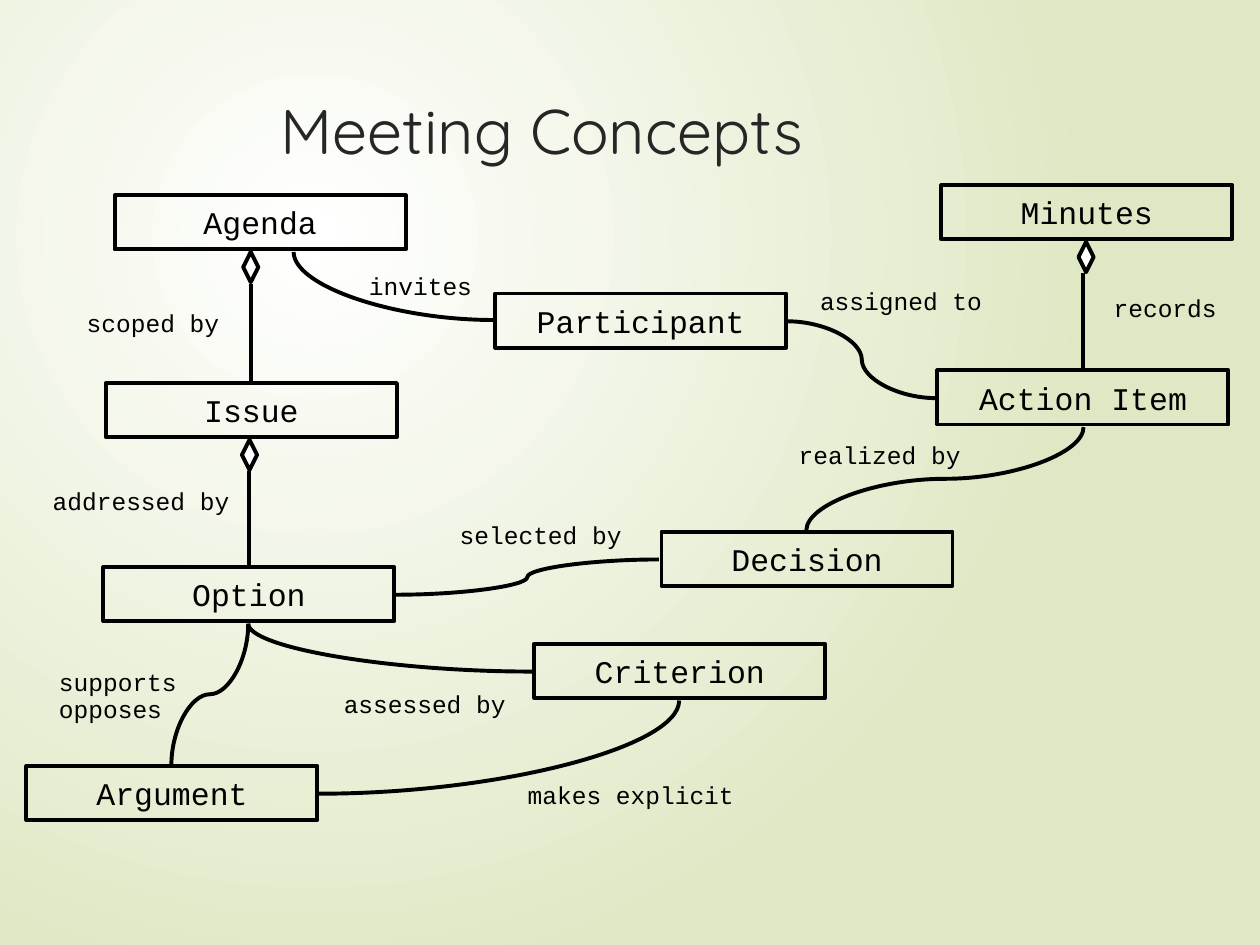
from lxml.etree import SubElement
from pptx import Presentation
from pptx.dml.color import RGBColor
from pptx.enum.shapes import MSO_CONNECTOR as Link, MSO_SHAPE as Shape
from pptx.enum.text import MSO_ANCHOR as Anchor, MSO_AUTO_SIZE as Fit, PP_ALIGN as Align
from pptx.oxml.ns import qn
from pptx.util import Inches, Pt

# Grid: 100 columns by 75 rows of square cells
CELL = Inches(10) // 100
BOX_WIDTH, BOX_HEIGHT = 23.1, 4.3
DIAMOND_WIDTH, DIAMOND_HEIGHT = 1.2, 2.4
LABEL_HEIGHT = 3.3
INK, PAPER, LEAF = "000000", "FFFFFF", "DFE8C4"

TITLE_FONT = {"name": "Quicksand", "size": Pt(36)}
BOX_FONT = {"name": "Courier New", "size": Pt(18)}
LABEL_FONT = {"name": "Courier New", "size": Pt(14)}
TITLE_FRAME = {"word_wrap": True, "vertical_anchor": Anchor.TOP}
BOX_FRAME = {"word_wrap": True, "vertical_anchor": Anchor.MIDDLE,
             "auto_size": Fit.SHAPE_TO_FIT_TEXT}
LABEL_FRAME = BOX_FRAME | {"word_wrap": False}

# Concept: left, top
CONCEPTS = {
    "Agenda": (9.1, 15.5), "Minutes": (74.7, 14.7),
    "Participant": (39.3, 23.3), "Action Item": (74.4, 29.4),
    "Issue": (8.4, 30.4), "Decision": (52.5, 42.2),
    "Option": (8.2, 45), "Criterion": (42.4, 51.1),
    "Argument": (2.1, 60.8),
}
# Part, and left and top of the diamond under its whole
AGGREGATIONS = [("Issue", 19.3, 20), ("Option", 19.2, 34.9), ("Action Item", 85.6, 19.2)]
# Start, end, starts vertically, number of bends
CURVES = [
    ((23.3, 20), (39.2, 25.4), True, 1),      # Agenda to Participant
    ((62.5, 25.5), (74.3, 31.6), False, 2),   # Participant to Action Item
    ((64, 42.1), (86, 33.9), True, 2),        # Decision to Action Item
    ((52.3, 44.4), (31.4, 47.2), False, 2),   # Decision to Option
    ((19.7, 49.5), (42.2, 53.3), True, 1),    # Option to Criterion
    ((19.7, 49.5), (13.6, 60.7), True, 2),    # Option to Argument
    ((53.9, 55.6), (25.3, 63), True, 1),      # Criterion to Argument
]
# Wording, left, top, width
LABELS = [
    ("invites", 28.3, 21, 10.2), ("assigned to", 64.1, 22.2, 14.9),
    ("records", 87.4, 22.8, 10.2), ("scoped by", 5.9, 24, 12.6),
    ("realized by", 62.4, 34.4, 14.9), ("addressed by", 3.2, 38.1, 16.1),
    ("selected by", 35.5, 40.8, 14.9), ("assessed by", 26.3, 54.2, 14.9),
    ("makes explicit", 40.9, 61.4, 18.4),
]


def cells(*counts):
    return [round(count * CELL) for count in counts]


def color(code):
    return RGBColor.from_string(code)


def apply(target, values):
    for name, value in values.items():
        setattr(target, name, value)


def stroke(line):
    line.color.rgb = color(INK)
    line.width = Pt(2.25)


def write(shape, text, frame, font, ink=INK, **para_format):
    apply(shape.text_frame, frame)
    para = shape.text_frame.paragraphs[0]
    para.text = text
    apply(para, para_format)
    for span in para.runs:
        apply(span.font, font)
        span.font.color.rgb = color(ink)


def add_background(page):
    fill = page.background.fill
    fill.gradient()
    for stop, position, code in zip(fill.gradient_stops, (0, 1), (PAPER, LEAF)):
        stop.position = position
        stop.color.rgb = color(code)
    # Radial gradient centred in the upper left quarter
    linear = page._element.find(".//" + qn("a:lin"))
    gradient = linear.getparent()
    gradient.remove(linear)
    circle = SubElement(gradient, qn("a:path"), {"path": "circle"})
    SubElement(circle, qn("a:fillToRect"), l="50000", t="50000", r="100000", b="100000")


def add_text(page, text, area, frame, font, **para_format):
    box = page.shapes.add_textbox(*cells(*area))
    write(box, text, frame, font, **para_format)


def add_outline(page, kind, area):
    shape = page.shapes.add_shape(kind, *cells(*area))
    shape.shadow.inherit = False
    stroke(shape.line)
    return shape


def add_concept(page, name, left, top):
    box = add_outline(page, Shape.RECTANGLE, (left, top, BOX_WIDTH, BOX_HEIGHT))
    box.fill.background()
    write(box, name, BOX_FRAME, BOX_FONT, alignment=Align.CENTER)
    return box


def add_link(page, kind, start, end):
    link = page.shapes.add_connector(kind, *cells(*start, *end))
    SubElement(link._element.spPr, qn("a:effectLst"))
    stroke(link.line)
    return link


def add_aggregation(page, part, left, top):
    diamond = add_outline(page, Shape.DIAMOND, (left, top, DIAMOND_WIDTH, DIAMOND_HEIGHT))
    diamond.fill.solid()
    diamond.fill.fore_color.rgb = color(PAPER)
    middle = (part.left + part.width / 2) / CELL
    link = add_link(page, Link.STRAIGHT, (middle, top + DIAMOND_HEIGHT + 0.1),
                    (middle, part.top / CELL))
    link.end_connect(part, 0)


def add_curve(page, start, end, vertical, bends):
    turn = 0
    if vertical:
        # Lay the curve flat about its centre, then turn it a quarter
        across, down = end[0] - start[0], end[1] - start[1]
        middle_x, middle_y = start[0] + across / 2, start[1] + down / 2
        turn = 90 if across < 0 else 270
        half_x = down / 2 if across < 0 else -down / 2
        half_y = abs(across) / 2
        start = (middle_x - half_x, middle_y - half_y)
        end = (middle_x + half_x, middle_y + half_y)
    properties = add_link(page, Link.CURVE, start, end)._element.spPr
    properties.find(qn("a:xfrm")).set("rot", str(turn * 60000))
    properties.find(qn("a:prstGeom")).set("prst", f"curvedConnector{bends + 1}")


def main():
    deck = Presentation()
    deck.slide_width, deck.slide_height = cells(100, 75)
    page = deck.slides.add_slide(deck.slide_layouts[6])
    add_background(page)

    # Title
    add_text(page, "Meeting Concepts", (21.3, 6.8, 72.1, 14), TITLE_FRAME,
             TITLE_FONT, ink="262626")

    # Concepts and their relations
    boxes = {name: add_concept(page, name, *place) for name, place in CONCEPTS.items()}
    for part, left, top in AGGREGATIONS:
        add_aggregation(page, boxes[part], left, top)
    for curve in CURVES:
        add_curve(page, *curve)

    # Names of the relations
    for text, left, top, width in LABELS:
        add_text(page, text, (left, top, width, LABEL_HEIGHT), LABEL_FRAME, LABEL_FONT)
    add_text(page, "supports\vopposes", (3.7, 52.7, 11.4, 5.2), LABEL_FRAME,
             LABEL_FONT, line_spacing=0.9)

    deck.save("out.pptx")


if __name__ == "__main__":
    main()
